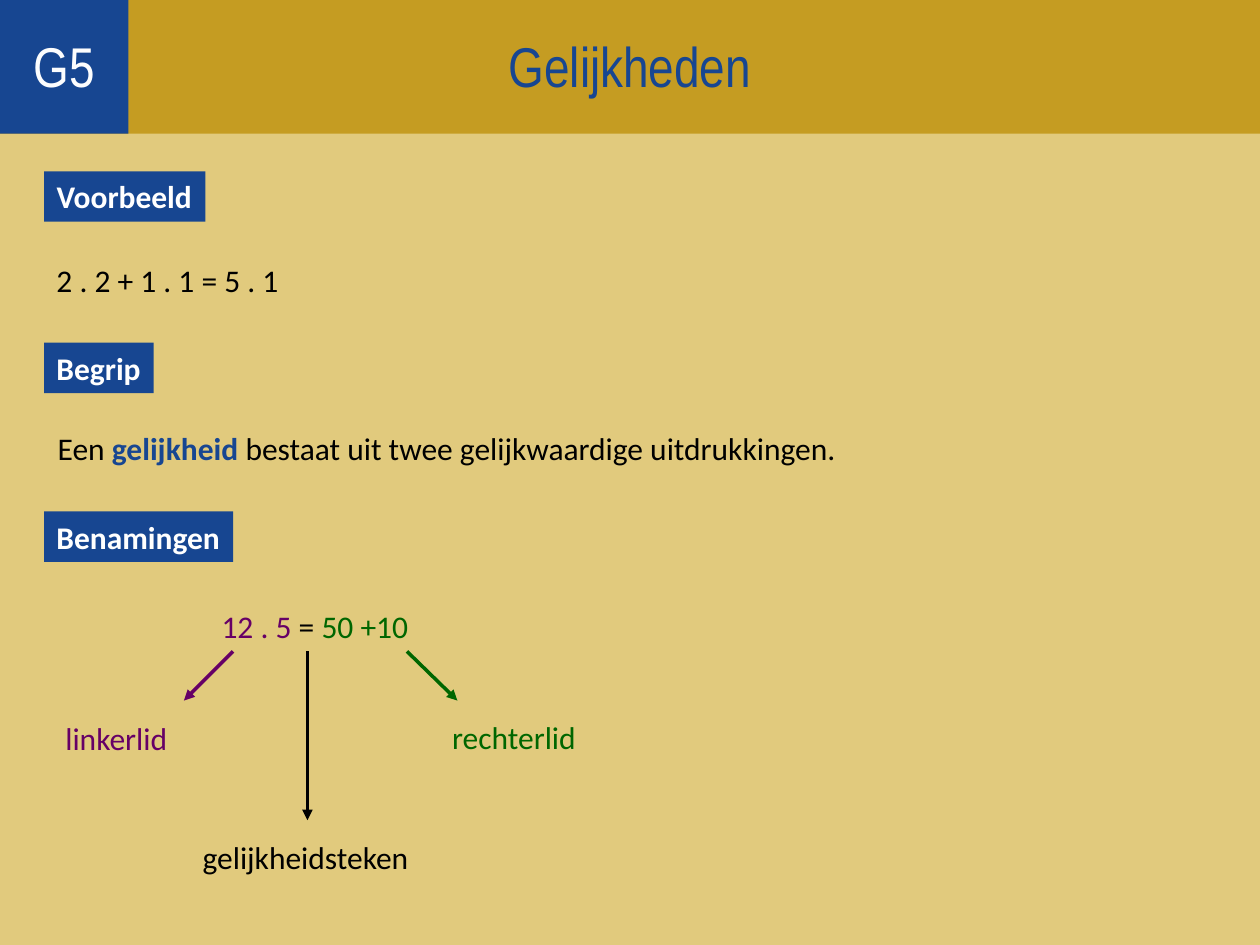
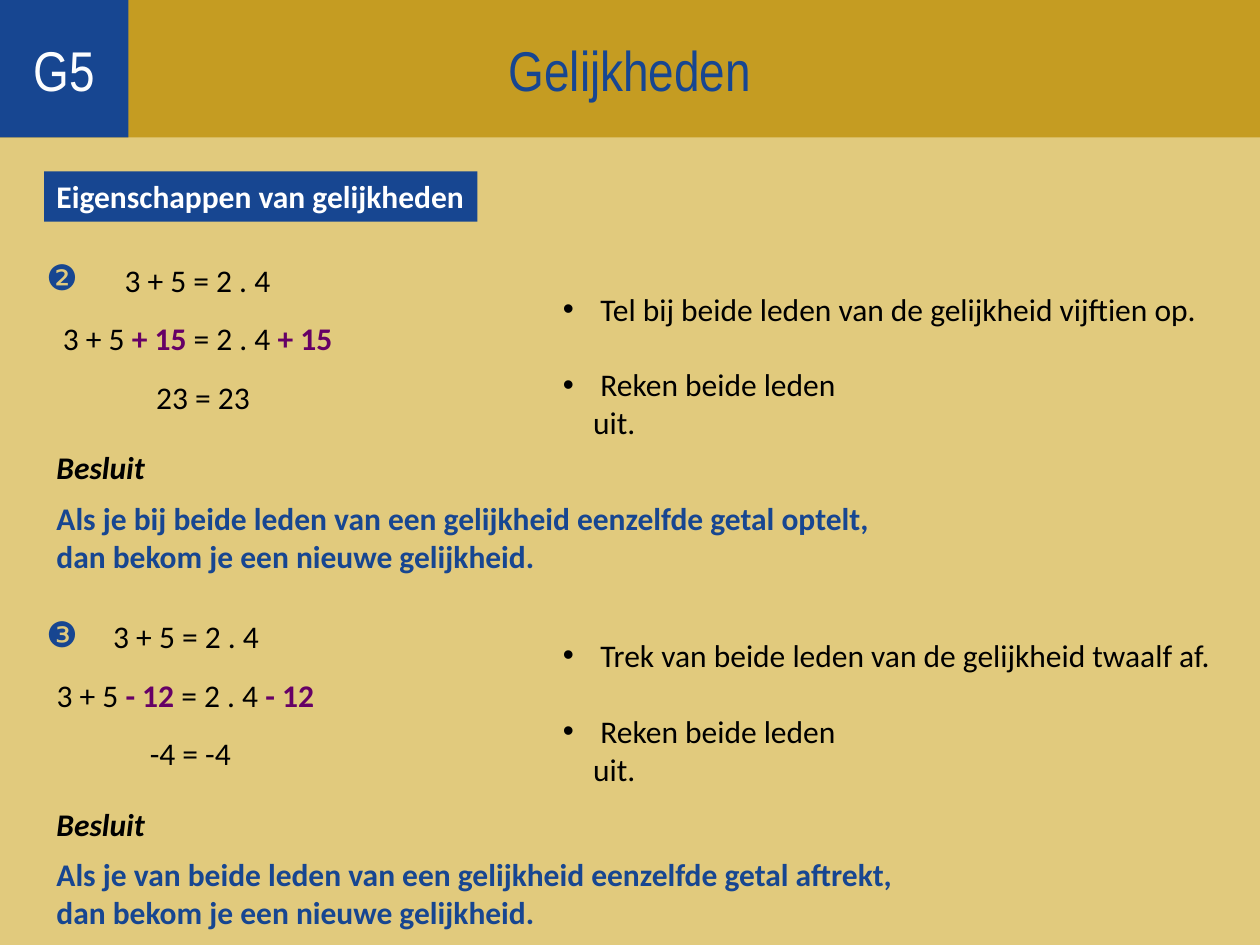
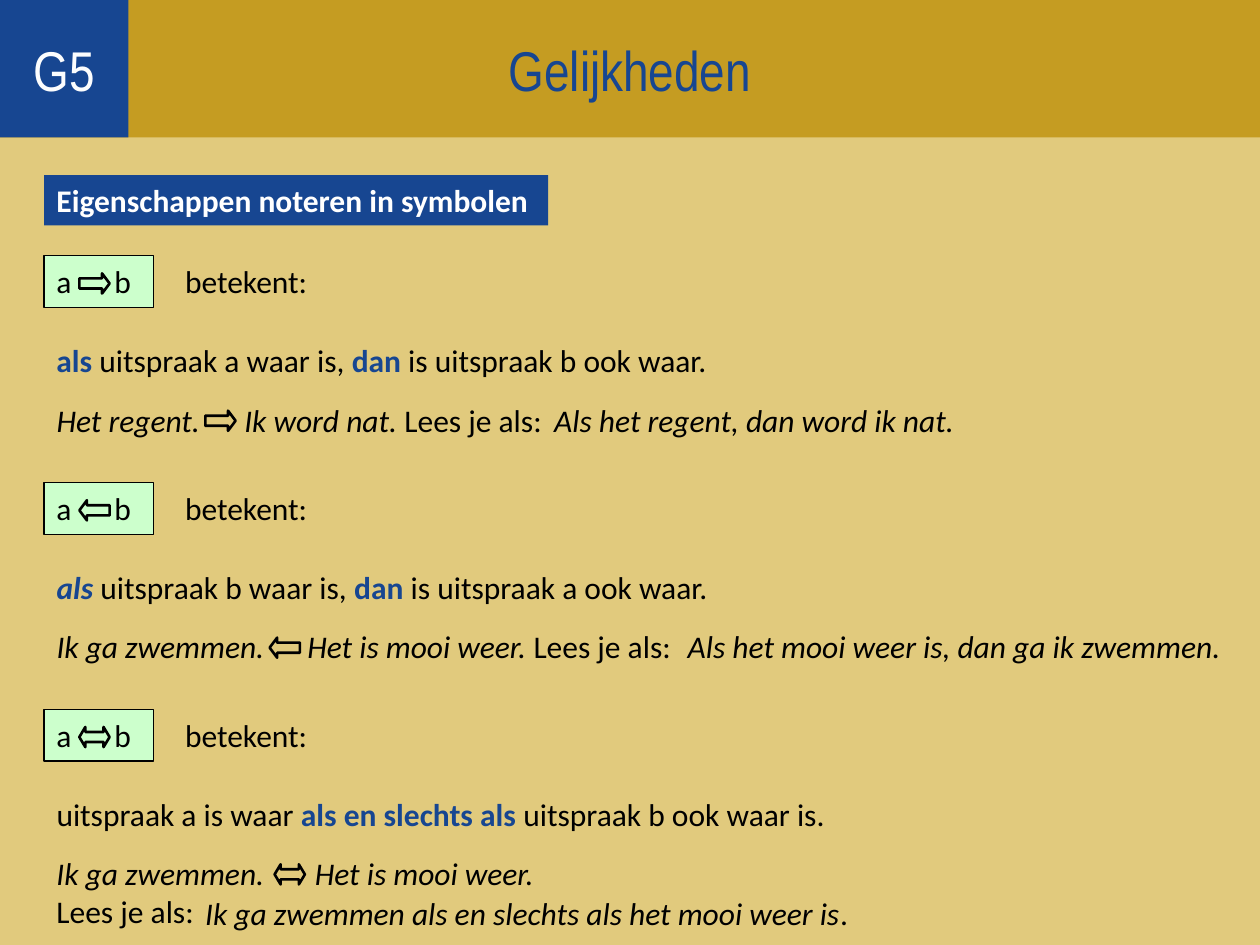
"""Build three slides about equalities, with shared header, labels and text."""
from dataclasses import dataclass

from lxml.etree import SubElement as Sub
from pptx import Presentation
from pptx.dml.color import RGBColor
from pptx.enum.shapes import MSO_CONNECTOR as Link, MSO_SHAPE as Kind
from pptx.enum.text import MSO_ANCHOR as Anchor, MSO_AUTO_SIZE as Fit, PP_ALIGN as Align
from pptx.oxml.ns import qn
from pptx.shapes.autoshape import Shape
from pptx.slide import Slide
from pptx.util import Inches, Pt

SAND = RGBColor(0xE1, 0xCA, 0x7D)
GOLD = RGBColor(0xC5, 0x9C, 0x22)
BLUE = RGBColor(0x17, 0x46, 0x91)
PURPLE = RGBColor(0x66, 0x00, 0x66)
GREEN = RGBColor(0x00, 0x66, 0x00)
MINT = RGBColor(0xCC, 0xFF, 0xCC)
BLACK = RGBColor(0x00, 0x00, 0x00)
WHITE = RGBColor(0xFF, 0xFF, 0xFF)
PALE = RGBColor(0xFC, 0xFD, 0xFE)
BODY, HEAD, SIGN = "Calibri", "Arial Narrow", "DejaVu Sans"
EDGE = 0.35
ROW = 0.4


@dataclass
class Span:
    text: str
    color: RGBColor = BLACK
    bold: bool = False
    slant: bool = False
    font: str = BODY
    size: int = 18


@dataclass
class Arrow:
    start: tuple[float, float]
    end: tuple[float, float]
    color: RGBColor


@dataclass
class Line:
    left: float
    width: float
    spans: list[Span]


@dataclass
class Proof:
    top: float
    mark: str
    lines: list[Line]
    task: str
    room: float
    drop: float
    law: str
    span: float


@dataclass
class Rule:
    kind: Kind
    bend: float
    turn: int
    sense: Line
    case: Line
    tab: float
    spot: float
    reading: Line
    fall: float


def write(shape: Shape, spans: list[Span]) -> None:
    para = shape.text_frame.paragraphs[0]
    para.text = spans[0].text
    pairs = [(run, spans[0]) for run in para.runs]
    for span in spans[1:]:
        run = para.add_run()
        run.text = span.text
        pairs.append((run, span))
    for run, span in pairs:
        font = run.font
        font.name, font.size = span.font, Pt(span.size)
        font.bold, font.italic = span.bold, span.slant
        font.color.rgb = span.color


def fit(shape: Shape, spans: list[Span], wrap: bool = False) -> None:
    write(shape, spans)
    frame = shape.text_frame
    frame.word_wrap = wrap
    frame.auto_size = Fit.SHAPE_TO_FIT_TEXT
    frame.vertical_anchor = Anchor.TOP
    frame.paragraphs[0].alignment = Align.LEFT


def text(slide: Slide, line: Line, top: float, wrap: bool = False,
         height: float = ROW) -> Shape:
    box = slide.shapes.add_textbox(Inches(line.left), Inches(top),
                                   Inches(line.width), Inches(height))
    fit(box, line.spans, wrap)
    return box


def block(slide: Slide, kind: Kind, left: float, top: float, width: float,
          height: float, fill: RGBColor | None = None, rim: float = 0) -> Shape:
    shape = slide.shapes.add_shape(kind, Inches(left), Inches(top),
                                   Inches(width), Inches(height))
    shape.shadow.inherit = False
    if fill is None:
        shape.fill.background()
    else:
        shape.fill.solid()
        shape.fill.fore_color.rgb = fill
    if rim:
        shape.line.color.rgb = BLACK
        shape.line.width = Pt(rim)
    else:
        shape.line.fill.background()
    return shape


def label(slide: Slide, words: str, top: float, width: float) -> None:
    shape = block(slide, Kind.RECTANGLE, EDGE, top, width, ROW, BLUE)
    fit(shape, [Span(words, WHITE, True)])


def header(slide: Slide, top: float) -> None:
    for words, width, fill, ink in (("Gelijkheden", 10, GOLD, BLUE),
                                    ("G5", 1.02, BLUE, PALE)):
        band = block(slide, Kind.RECTANGLE, 0, top, width, 1.09, fill)
        write(band, [Span(words, ink, font=HEAD, size=32)])
        band.text_frame.vertical_anchor = Anchor.MIDDLE
        band.text_frame.paragraphs[0].alignment = Align.CENTER


def point(slide: Slide, arrow: Arrow) -> None:
    ends = [Inches(n) for n in (*arrow.start, *arrow.end)]
    link = slide.shapes.add_connector(Link.STRAIGHT, *ends)
    link.line.color.rgb = arrow.color
    link.line.width = Pt(2)
    Sub(link.line._get_or_add_ln(), qn("a:tailEnd"), type="triangle")
    Sub(link._element.spPr, qn("a:effectLst"))


def bullet(slide: Slide, words: str, top: float, width: float) -> None:
    box = text(slide, Line(4.37, width, [Span(words)]), top, True)
    props = box.text_frame.paragraphs[0]._p.get_or_add_pPr()
    props.set("marL", str(Inches(0.24)))
    props.set("indent", str(-Inches(0.24)))
    Sub(props, qn("a:buFont"), typeface="Arial")
    Sub(props, qn("a:buChar"), char="•")


def stop(shape: Shape, place: float) -> None:
    props = shape.text_frame.paragraphs[0]._p.get_or_add_pPr()
    tabs = Sub(props, qn("a:tabLst"))
    Sub(tabs, qn("a:tab"), pos=str(Inches(place)), algn="l")


def prove(slide: Slide, proof: Proof) -> None:
    top = proof.top
    mark = Span(proof.mark, BLUE, font=SIGN, size=20)
    text(slide, Line(0.27, 0.45, [mark]), top, height=0.43)
    for step, line in enumerate(proof.lines):
        text(slide, line, top + 0.04 + 0.465 * step)
    bullet(slide, proof.task, top + proof.drop, proof.room)
    bullet(slide, " Reken beide leden uit.", top + proof.drop + 0.6, 2.66)
    text(slide, Line(EDGE, 0.9, [Span("Besluit", BLACK, True, True)]), top + 1.53)
    law = Span(proof.law + "\vdan bekom je een nieuwe gelijkheid.", BLUE, True)
    text(slide, Line(EDGE, proof.span, [law]), top + 1.93, height=0.7)


def sign(slide: Slide, rule: Rule, left: float, top: float) -> None:
    shape = block(slide, rule.kind, left, top, 0.24, 0.16, rim=1.5)
    shape.adjustments[0], shape.adjustments[1] = 0.5, rule.bend
    shape.rotation = rule.turn


def define(slide: Slide, rule: Rule, top: float) -> None:
    card = block(slide, Kind.RECTANGLE, EDGE, top, 0.87, 0.41, MINT, 0.75)
    fit(card, [Span("a\tb")], True)
    stop(card, 0.46)
    sign(slide, rule, 0.63, top + 0.14)
    text(slide, Line(1.37, 1.19, [Span("betekent:")]), top)
    text(slide, rule.sense, top + 0.63)
    stop(text(slide, rule.case, top + 1.1, True), rule.tab)
    sign(slide, rule, rule.spot, top + 1.23)
    text(slide, rule.reading, top + rule.fall)


def sums(sign: str, lefts: tuple, widths: tuple, end: str) -> list[Line]:
    extra = Span(sign, PURPLE, True)
    rows = ([Span("3 + 5 = 2 . 4")],
            [Span("3 + 5 "), extra, Span(" = 2 . 4 "), extra],
            [Span(end)])
    return [Line(*row) for row in zip(lefts, widths, rows)]


def tale(words: str, width: float) -> Line:
    return Line(EDGE, width, [Span(words, slant=True), Span("Lees je als:")])


def terms(slide: Slide) -> None:
    for words, top, width in (("Voorbeeld", 1.36, 1.28), ("Begrip", 2.72, 0.87),
                              ("Benamingen", 4.06, 1.5)):
        label(slide, words, top, width)
    for top, line in (
        (2.02, Line(EDGE, 1.97, [Span("2 . 2 + 1 . 1 = 5 . 1")])),
        (3.36, Line(0.36, 6.41, [
            Span("Een "), Span("gelijkheid ", BLUE, True),
            Span("bestaat uit twee gelijkwaardige uitdrukkingen.")])),
        (4.77, Line(1.66, 1.69, [Span("12 . 5", PURPLE), Span(" = "),
                                 Span("50 +10", GREEN)])),
        (5.66, Line(0.42, 1.02, [Span("linkerlid", PURPLE)])),
        (5.65, Line(3.49, 1.19, [Span("rechterlid", GREEN)])),
        (6.6, Line(1.51, 1.85, [Span("gelijkheidsteken")])),
    ):
        text(slide, line, top)
    for arrow in (Arrow((1.85, 5.17), (1.46, 5.56), PURPLE),
                  Arrow((3.23, 5.17), (3.63, 5.56), GREEN),
                  Arrow((2.44, 5.17), (2.44, 6.51), BLACK)):
        point(slide, arrow)


def laws(slide: Slide) -> None:
    label(slide, "Eigenschappen van gelijkheden", 1.36, 3.44)
    prove(slide, Proof(
        1.98, "❷",
        sums("+ 15", (0.89, 0.4, 1.14), (1.36, 2.35, 0.95), "23 = 23"),
        " Tel bij beide leden van de gelijkheid vijftien op.", 5.27, 0.27,
        "Als je bij beide leden van een gelijkheid eenzelfde getal optelt,", 6.66))
    prove(slide, Proof(
        4.81, "❸",
        sums("- 12", (0.8, EDGE, 1.09), (1.36, 2.25, 0.85), "-4 = -4"),
        " Trek van beide leden van de gelijkheid twaalf af.", 5.43, 0.19,
        "Als je van beide leden van een gelijkheid eenzelfde getal aftrekt,", 6.86))


def signs(slide: Slide) -> None:
    label(slide, "Eigenschappen noteren in symbolen", 1.39, 4)
    rules = (
        Rule(Kind.RIGHT_ARROW, 0.374, 0,
             Line(EDGE, 5.4, [Span("als", BLUE, True), Span(" uitspraak a waar is, "),
                              Span("dan", BLUE, True),
                              Span(" is uitspraak b ook waar.")]),
             tale("Het regent.\tIk word nat. ", 7.15), 1.49, 1.63,
             Line(4.3, 3.38, [Span("Als het regent, dan word ik nat.", slant=True)]),
             1.1),
        Rule(Kind.RIGHT_ARROW, 0.374, 180,
             Line(EDGE, 5.41, [Span("als", BLUE, True, True),
                               Span(" uitspraak b waar is, "),
                               Span("dan", BLUE, True),
                               Span(" is uitspraak a ook waar.")]),
             tale("Ik ga zwemmen.\tHet is mooi weer. ", 8.11), 1.99, 2.14,
             Line(5.36, 4.44, [Span("Als het mooi weer is, dan ga ik zwemmen.",
                                    slant=True)]), 1.1),
        Rule(Kind.LEFT_RIGHT_ARROW, 0.299, 0,
             Line(EDGE, 6.31, [Span("uitspraak a is waar "),
                               Span("als en slechts als", BLUE, True),
                               Span(" uitspraak b ook waar is.")]),
             tale("Ik ga zwemmen.\tHet is mooi weer.\v", 9.06), 2.05, 2.18,
             Line(1.53, 5.31, [
                 Span("Ik ga zwemmen als en slechts als het mooi weer is",
                      slant=True), Span(".")]), 1.42),
    )
    for step, rule in enumerate(rules):
        define(slide, rule, 2.03 + 1.8 * step)


def main() -> None:
    deck = Presentation()
    deck.slide_width, deck.slide_height = Inches(10), Inches(7.5)
    for draw, top in ((terms, -0.03), (laws, 0), (signs, 0)):
        slide = deck.slides.add_slide(deck.slide_layouts[6])
        slide.background.fill.solid()
        slide.background.fill.fore_color.rgb = SAND
        draw(slide)
        header(slide, top)
    deck.save("out.pptx")


if __name__ == "__main__":
    main()
